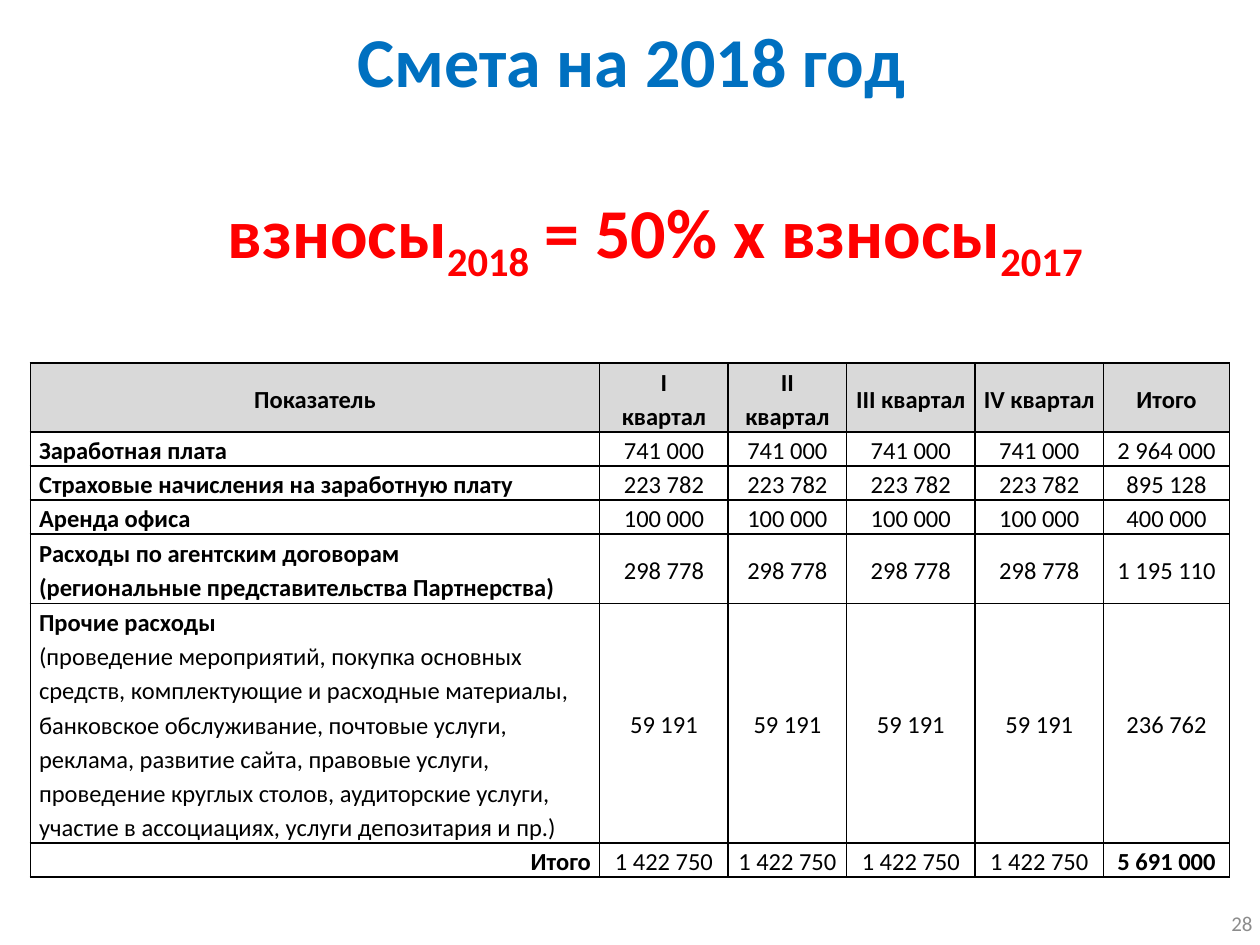
from dataclasses import dataclass

from lxml import etree
from pptx import Presentation, util as u
from pptx.dml.color import RGBColor
from pptx.enum import text
from pptx.oxml.ns import qn


@dataclass(frozen=True)
class Theme:
    font: str = "Calibri"
    title: str = "0070C0"
    accent: str = "FF0000"
    ink: str = "000000"
    muted: str = "8C8C8C"
    header: str = "D9D9D9"
    heading_size: int = 40
    table_size: int = 14
    number_size: int = 12


THEME = Theme()
LEFT, CENTER, RIGHT = text.PP_ALIGN.LEFT, text.PP_ALIGN.CENTER, text.PP_ALIGN.RIGHT

HEADERS = ["Показатель", "I\nквартал", "II\nквартал", "III квартал", "IV квартал", "Итого"]
COLUMN_WIDTHS = [4.52, 1.02, 0.94, 1.02, 1.02, 1]
HEADER_HEIGHT = 0.55

# Bold lines, plain note, amount per quarter, yearly total, row height
EXPENSES = [
    ("Заработная плата", "", 741000, 2964000, 0.27),
    ("Страховые начисления на заработную плату", "", 223782, 895128, 0.27),
    ("Аренда офиса", "", 100000, 400000, 0.27),
    ("Расходы по агентским договорам\n(региональные представительства Партнерства)",
     "", 298778, 1195110, 0.55),
    ("Прочие расходы",
     "(проведение мероприятий, покупка основных средств, комплектующие и расходные "
     "материалы, банковское обслуживание, почтовые услуги, реклама, развитие сайта, "
     "правовые услуги, проведение круглых столов, аудиторские услуги, участие в "
     "ассоциациях, услуги депозитария и пр.)", 59191, 236762, 1.9),
    ("Итого", "", 1422750, 5691000, 0.27),
]


def write(para, content, *, size, color=THEME.ink, bold=False, align=LEFT,
          spacing=None, baseline=0):
    """Add a formatted span to a paragraph."""
    para.alignment = align
    if spacing:
        para.line_spacing = spacing
    span = para.add_run()
    span.text = content
    span.font.name = THEME.font
    span.font.size = u.Pt(size)
    span.font.bold = bold
    span.font.color.rgb = RGBColor.from_string(color)
    if baseline:
        span.font._element.set("baseline", str(baseline * 1000))


def add_title(page, content):
    box = page.shapes.title
    box.left, box.top = u.Inches(0), u.Inches(-0.02)
    box.width, box.height = u.Inches(10.02), u.Inches(0.98)
    box.text_frame.vertical_anchor = text.MSO_ANCHOR.MIDDLE
    write(box.text_frame.paragraphs[0], content, size=THEME.heading_size,
          color=THEME.title, bold=True, align=CENTER)


def add_text_box(page, left, top, width, height, spans, *, anchor=text.MSO_ANCHOR.TOP,
                 **style):
    """Add a one-line box; spans are (content, baseline) pairs."""
    box = page.shapes.add_textbox(*map(u.Inches, (left, top, width, height)))
    box.text_frame.word_wrap = True
    box.text_frame.vertical_anchor = anchor
    for content, baseline in spans:
        write(box.text_frame.paragraphs[0], content, baseline=baseline, **style)


def add_borders(cell):
    properties = cell._tc.get_or_add_tcPr()
    for position, side in enumerate(("lnL", "lnR", "lnT", "lnB")):
        line = etree.Element(qn(f"a:{side}"), w=str(u.Pt(1)))
        fill = etree.SubElement(line, qn("a:solidFill"))
        etree.SubElement(fill, qn("a:srgbClr"), val=THEME.ink)
        properties.insert(position, line)


def fill_cell(cell, lines, *, align=CENTER, fill=None):
    """Fill a cell with (content, bold) lines."""
    cell.margin_left = cell.margin_right = u.Inches(0.07)
    cell.margin_top = cell.margin_bottom = 0
    cell.vertical_anchor = text.MSO_ANCHOR.MIDDLE
    if fill:
        cell.fill.solid()
        cell.fill.fore_color.rgb = RGBColor.from_string(fill)
    else:
        cell.fill.background()
    add_borders(cell)
    frame = cell.text_frame
    for number, (content, bold) in enumerate(lines):
        para = frame.add_paragraph() if number else frame.paragraphs[0]
        write(para, content, size=THEME.table_size, bold=bold, align=align, spacing=1.15)


def bold_lines(content):
    return [(line, True) for line in content.split("\n")]


def amount(value):
    return f"{value:,}".replace(",", " ")


def add_budget_table(page, left, top):
    heights = [HEADER_HEIGHT] + [expense[-1] for expense in EXPENSES]
    table = page.shapes.add_table(
        len(heights), len(COLUMN_WIDTHS), u.Inches(left), u.Inches(top),
        u.Inches(sum(COLUMN_WIDTHS)), u.Inches(sum(heights))).table
    for column, width in zip(table.columns, COLUMN_WIDTHS):
        column.width = u.Inches(width)
    for row, height in zip(table.rows, heights):
        row.height = u.Inches(height)

    for column, header in enumerate(HEADERS):
        fill_cell(table.cell(0, column), bold_lines(header), fill=THEME.header)

    for row, (name, note, quarter, total, _) in enumerate(EXPENSES, start=1):
        is_last = row == len(EXPENSES)
        label = bold_lines(name) + ([(note, False)] if note else [])
        fill_cell(table.cell(row, 0), label, align=RIGHT if is_last else LEFT)
        for column in range(1, 5):
            fill_cell(table.cell(row, column), [(amount(quarter), False)])
        fill_cell(table.cell(row, 5), [(amount(total), is_last)])


def main():
    deck = Presentation()
    deck.slide_width, deck.slide_height = u.Inches(10), u.Inches(7.5)
    page = deck.slides.add_slide(deck.slide_layouts[5])

    # Page number
    add_text_box(page, 7.71, 7.13, 2.33, 0.4, [("28", 0)], size=THEME.number_size,
                 color=THEME.muted, align=RIGHT, anchor=text.MSO_ANCHOR.MIDDLE)

    # Title and budget
    add_title(page, "Смета на 2018 год")
    add_budget_table(page, 0.24, 2.88)

    # Contribution formula
    formula = [("взносы", 0), ("2018", -25), (" = 50% х взносы", 0), ("2017", -25)]
    add_text_box(page, 0.83, 1.45, 8.74, 0.77, formula, size=THEME.heading_size,
                 color=THEME.accent, bold=True, align=CENTER)

    deck.save("out.pptx")


if __name__ == "__main__":
    main()
